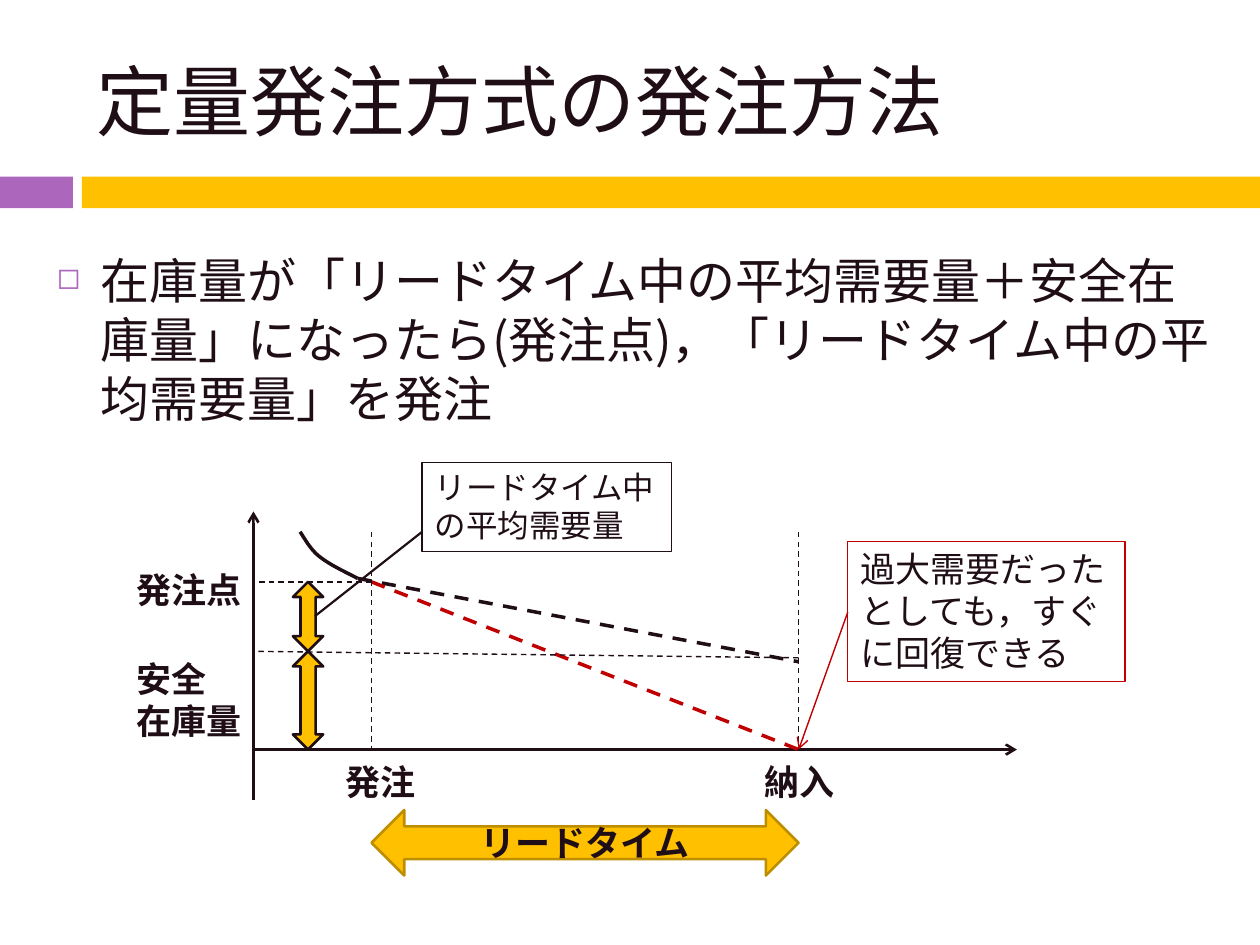
from lxml.etree import SubElement
from pptx import Presentation
from pptx.dml.color import RGBColor
from pptx.enum.dml import MSO_LINE
from pptx.enum.shapes import MSO_CONNECTOR, MSO_SHAPE
from pptx.enum.text import MSO_ANCHOR, PP_ALIGN
from pptx.oxml.ns import qn
from pptx.util import Cm, Pt

FONT = "Noto Sans CJK JP"
COLORS = {
    "ink": "200E17",
    "purple": "AC66BB",
    "gold": "FFC000",
    "gold_edge": "BD8E00",
    "red": "C00000",
}


def rgb(name):
    return RGBColor.from_string(COLORS[name])


def add_text(tf, lines, size, bold=False, align=PP_ALIGN.LEFT):
    for i, line in enumerate(lines):
        p = tf.paragraphs[0] if i == 0 else tf.add_paragraph()
        p.alignment = align
        p.line_spacing = Pt(size * 1.2)
        r = p.add_run()
        r.text = line
        r.font.size = Pt(size)
        r.font.bold = bold
        r.font.name = FONT
        r.font.color.rgb = rgb("ink")
        SubElement(r.font._element, qn("a:ea"), typeface=FONT)


def add_box(s, x, y, w, h, lines, size, bold=False, wrap=True, anchor=MSO_ANCHOR.TOP):
    sp = s.shapes.add_textbox(Cm(x), Cm(y), Cm(w), Cm(h))
    tf = sp.text_frame
    tf.word_wrap = wrap
    tf.vertical_anchor = anchor
    add_text(tf, lines, size, bold)
    return sp


def add_block(s, kind, x, y, w, h, fill=None, line=None, weight=1.5):
    sp = s.shapes.add_shape(kind, Cm(x), Cm(y), Cm(w), Cm(h))
    sp.shadow.inherit = False
    if fill:
        sp.fill.solid()
        sp.fill.fore_color.rgb = rgb(fill)
    else:
        sp.fill.background()
    if line:
        sp.line.color.rgb = rgb(line)
        sp.line.width = Pt(weight)
    else:
        sp.line.fill.background()
    return sp


def add_line(s, start, end, color="ink", weight=0.79, dash=False, arrow=False):
    cx = s.shapes.add_connector(
        MSO_CONNECTOR.STRAIGHT, *(Cm(v) for v in (*start, *end))
    )
    cx.line.color.rgb = rgb(color)
    cx.line.width = Pt(weight)
    if dash:
        cx.line.dash_style = MSO_LINE.DASH
    if arrow:
        SubElement(cx.line._get_or_add_ln(), qn("a:tailEnd"), type="arrow")
    SubElement(cx._element.spPr, qn("a:effectLst"))


def add_callout(s, x, y, w, h, text, size, color):
    sp = add_block(s, MSO_SHAPE.RECTANGLE, x, y, w, h, line=color, weight=0.75)
    tf = sp.text_frame
    tf.word_wrap = True
    tf.vertical_anchor = MSO_ANCHOR.TOP
    add_text(tf, [text], size)


def bezier(p0, p1, p2, p3, steps=12):
    for i in range(1, steps + 1):
        t = i / steps
        u = 1 - t
        yield tuple(
            u**3 * a + 3 * u * u * t * b + 3 * u * t * t * c + t**3 * d
            for a, b, c, d in zip(p0, p1, p2, p3)
        )


def add_band(s, x, y, w, h):
    split, gap = 1.47, 0.18
    add_block(s, MSO_SHAPE.RECTANGLE, x, y, split, h, "purple")
    start = split + gap
    add_block(s, MSO_SHAPE.RECTANGLE, x + start, y, w - start, h, "gold")


def add_title(s, x, y, w, h, text):
    add_box(s, x, y, w, h, [text], 44, anchor=MSO_ANCHOR.MIDDLE)


def add_body(s, x, y, w, h, text):
    p = add_box(s, x, y, w, h, [text], 28).text_frame.paragraphs[0]
    p.space_before = Pt(7)
    pPr = p._p.get_or_add_pPr()
    pPr.set("marL", str(Cm(0.89)))
    pPr.set("indent", str(-Cm(0.89)))
    color = SubElement(pPr, qn("a:buClr"))
    SubElement(color, qn("a:srgbClr"), val=COLORS["purple"])
    SubElement(pPr, qn("a:buSzPct"), val="60000")
    SubElement(pPr, qn("a:buChar"), char="◻")


def add_stock_curve(s, x, y):
    points = [
        (x + dx, y + dy)
        for dx, dy in [
            (0, 0), (0.12, 0.18), (0.22, 0.38), (0.43, 0.53),
            (0.63, 0.68), (0.91, 0.81), (1.16, 0.94),
        ]
    ]
    fb = s.shapes.build_freeform(Cm(x), Cm(y))
    curve = [*bezier(*points[:4]), *bezier(*points[3:])]
    fb.add_line_segments([(Cm(a), Cm(b)) for a, b in curve], close=False)
    sp = fb.convert_to_shape()
    sp.shadow.inherit = False
    sp.fill.background()
    sp.line.color.rgb = rgb("ink")
    sp.line.width = Pt(2)
    return points[-1]


def add_height_arrow(s, x, top, bottom):
    length, thick = bottom - top, 0.61
    middle = (top + bottom) / 2
    sp = add_block(
        s, MSO_SHAPE.LEFT_RIGHT_ARROW,
        x - length / 2, middle - thick / 2, length, thick, "gold", "ink",
    )
    sp.rotation = 90


def add_stock_diagram(s, x, y, w, h):
    axis, order, delivery = x + 2.61, x + 4.99, x + 13.6
    guide_top, reorder, safety, base = y + 1.42, y + 2.43, y + 3.83, y + 5.81

    add_line(s, (axis, y + 6.83), (axis, y + 1.01), weight=1.5, arrow=True)
    add_line(s, (axis, base), (x + w, base), weight=1.5, arrow=True)
    curve_end = add_stock_curve(s, x + 3.55, guide_top)
    add_line(s, curve_end, (delivery, y + 4.04), weight=2, dash=True)
    add_line(s, (order, reorder), (delivery, base), "red", 2, dash=True)
    for guide in (delivery, order):
        add_line(s, (guide, guide_top), (guide, base), dash=True)
    add_line(s, (order, reorder), (axis, reorder), dash=True)
    add_line(s, (delivery, y + 3.96), (axis, safety), dash=True)

    add_callout(s, x + 14.59, y + 1.62, 5.59, 2.82,
                "過大需要だったとしても，すぐに回復できる", 20, "red")
    add_line(s, (x + 14.59, y + 3.04), (delivery, base), "red", arrow=True)

    for dx, dy, lw, lh, lines, wrap in [
        (0, 2.03, 2.64, 1.12, ["発注点"], False),
        (0, 3.83, 2.79, 1.96, ["安全", "在庫量"], True),
        (4.21, 5.91, 1.93, 1.12, ["発注"], False),
        (12.66, 5.91, 1.93, 1.12, ["納入"], False),
    ]:
        add_box(s, x + dx, y + dy, lw, lh, lines, 20, bold=True, wrap=wrap)

    for top, bottom in [(safety, base), (reorder, safety)]:
        add_height_arrow(s, x + 3.71, top, bottom)
    sp = add_block(s, MSO_SHAPE.LEFT_RIGHT_ARROW, order, y + h - 1.32,
                   delivery - order, 1.32, "gold", "gold_edge")
    tf = sp.text_frame
    tf.vertical_anchor = MSO_ANCHOR.MIDDLE
    add_text(tf, ["リードタイム"], 20, True, PP_ALIGN.CENTER)

    add_callout(s, x + 6.01, y + 0.02, 5.03, 1.8,
                "リードタイム中の平均需要量", 18, "ink")
    add_line(s, (x + 6.01, guide_top), (x + 3.85, y + 3.12), weight=1.25)


def main():
    prs = Presentation()
    prs.slide_width, prs.slide_height = Cm(25.4), Cm(19.05)
    s = prs.slides.add_slide(prs.slide_layouts[6])
    add_band(s, 0, 3.56, 25.4, 0.64)
    add_title(s, 1.7, 0.64, 22.66, 2.74, "定量発注方式の発注方法")
    add_body(s, 0.89, 4.93, 23.8, 13.59,
             "在庫量が「リードタイム中の平均需要量＋安全在庫量」になったら"
             "(発注点)，「リードタイム中の平均需要量」を発注")
    add_stock_diagram(s, 2.5, 9.3, 18, 8.35)
    prs.save("out.pptx")


if __name__ == "__main__":
    main()
